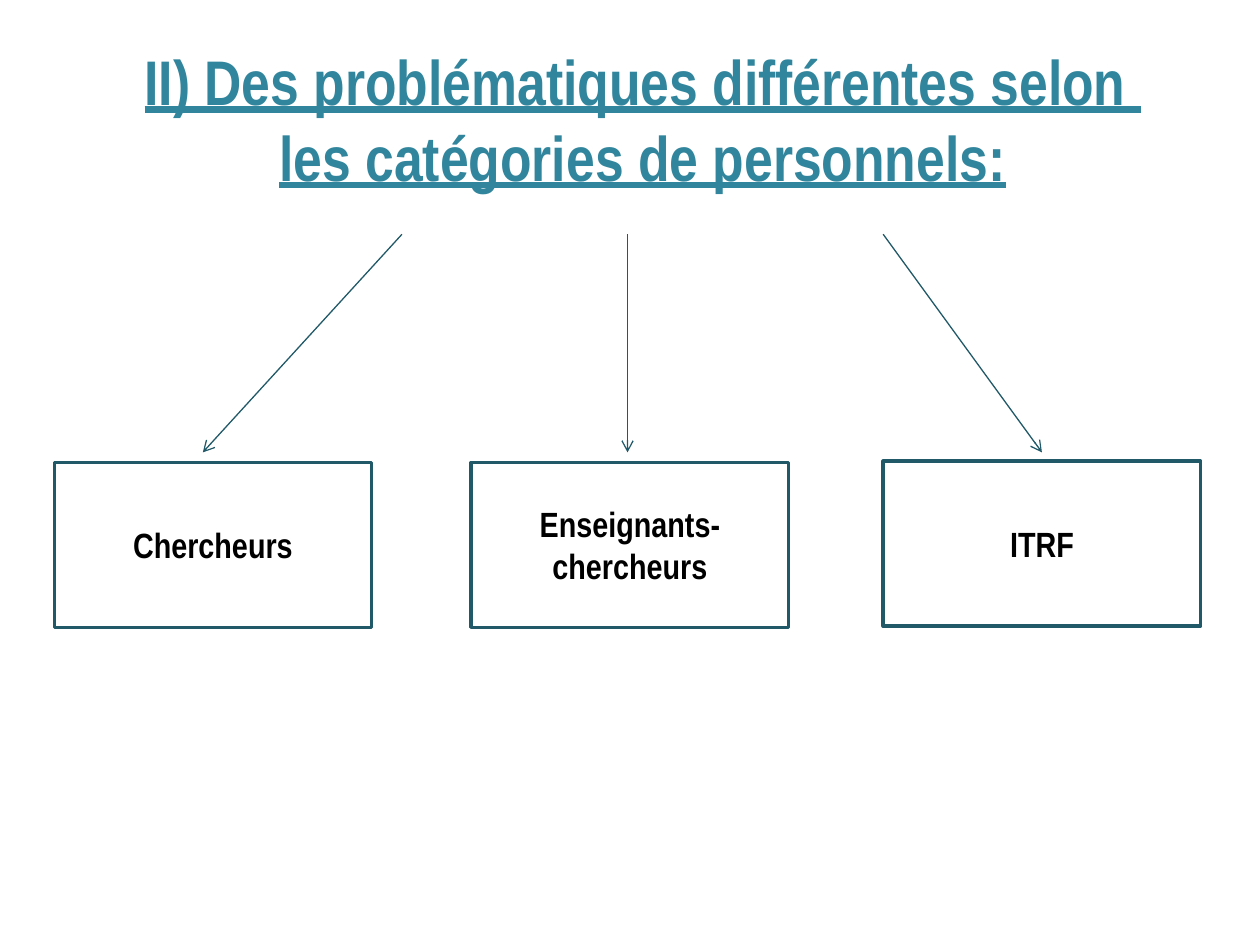
from lxml.etree import SubElement
from pptx import Presentation
from pptx.dml.color import RGBColor
from pptx.enum.shapes import MSO_CONNECTOR as CONN, MSO_SHAPE as SHAPE
from pptx.enum.text import MSO_ANCHOR as ANCHOR, MSO_AUTO_SIZE as AUTO, PP_ALIGN as ALIGN
from pptx.oxml.ns import qn
from pptx.util import Pt

TEAL = RGBColor(0x31, 0x85, 0x9C)
DARK_TEAL = RGBColor(0x21, 0x59, 0x68)
WHITE = RGBColor(0xFF, 0xFF, 0xFF)
BLACK = RGBColor(0, 0, 0)

TITLE_FONT = {"name": "Arial Narrow", "size": Pt(36), "bold": True, "underline": True}
BOX_FONT = {"name": "Arial Narrow", "size": Pt(20), "bold": True}

BOX_W, BOX_H = 181.4, 94.3
ARROW_TOP, ARROW_BOTTOM = 133.9, 258.5
CATEGORIES = [
    ("Chercheurs", 31, 264.2, 229.7, 115.9),
    ("Enseignants-chercheurs", 269.3, 264.2, 358.6, 358.6),
    ("ITRF", 504.7, 263.5, 504.7, 595.4),
]


def add_paragraph(p, text, fmt, color):
    p.alignment = ALIGN.CENTER
    r = p.add_run()
    r.text = text
    for key, value in fmt.items():
        setattr(r.font, key, value)
    r.font.color.rgb = color


def fill_title(s, lines):
    sp = s.shapes.title
    sp.left, sp.top, sp.width, sp.height = Pt(14.4), Pt(20.9), Pt(705.6), Pt(94.3)
    tf = sp.text_frame
    tf.word_wrap = True
    tf.auto_size = AUTO.NONE
    tf.vertical_anchor = ANCHOR.TOP
    for i, line in enumerate(lines):
        p = tf.add_paragraph() if i else tf.paragraphs[0]
        add_paragraph(p, line, TITLE_FONT, TEAL)


def add_box(s, text, left, top):
    sp = s.shapes.add_shape(SHAPE.RECTANGLE, Pt(left), Pt(top), Pt(BOX_W), Pt(BOX_H))
    sp.shadow.inherit = False
    sp.fill.solid()
    sp.fill.fore_color.rgb = WHITE
    sp.line.color.rgb = DARK_TEAL
    sp.line.width = Pt(2)
    tf = sp.text_frame
    tf.word_wrap = True
    tf.vertical_anchor = ANCHOR.MIDDLE
    add_paragraph(tf.paragraphs[0], text, BOX_FONT, BLACK)


def add_arrow(s, start, end):
    c = s.shapes.add_connector(
        CONN.STRAIGHT, Pt(start), Pt(ARROW_TOP), Pt(end), Pt(ARROW_BOTTOM))
    c.line.color.rgb = DARK_TEAL
    c.line.width = Pt(0.75)
    SubElement(c.line._get_or_add_ln(), qn("a:tailEnd"), type="arrow")
    SubElement(c._element.spPr, qn("a:effectLst"))


def main():
    prs = Presentation()
    prs.slide_width, prs.slide_height = Pt(720), Pt(540)
    s = prs.slides.add_slide(prs.slide_layouts[5])
    fill_title(s, ["II) Des problématiques différentes selon ",
                   "les catégories de personnels:"])
    for text, left, top, start, end in CATEGORIES:
        add_box(s, text, left, top)
        add_arrow(s, start, end)
    prs.save("out.pptx")


if __name__ == "__main__":
    main()
